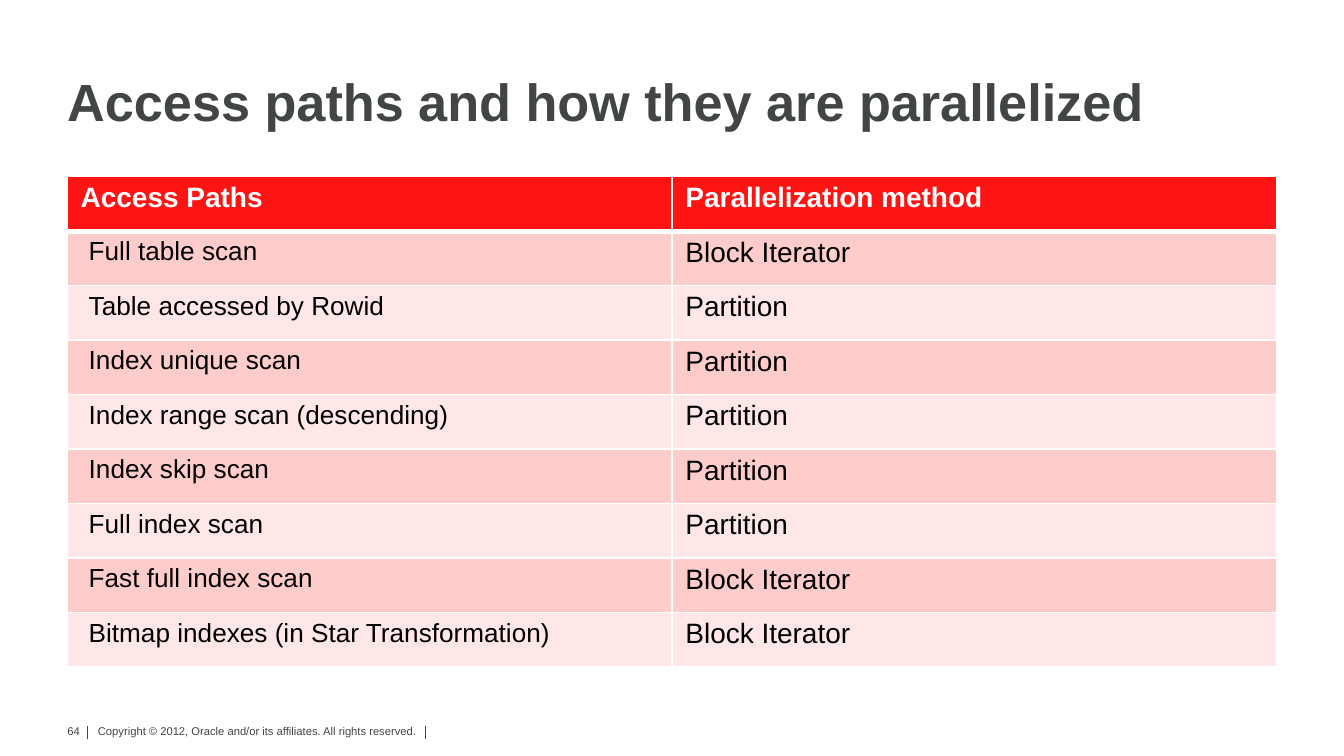
import pptx
import pptx.dml.color
import pptx.enum.shapes
import pptx.enum.text
import pptx.oxml
import pptx.oxml.ns
import pptx.util

Pt = pptx.util.Pt
GREY, WHITE, BLACK = "424545", "FFFFFF", "000000"
HEADER_RED, DARK_BAND, LIGHT_BAND = "FF1414", "FFCCCC", "FFE7E7"
ACCESS_PATHS = [
    ("Access Paths", "Parallelization method"),
    ("Full table scan", "Block Iterator"),
    ("Table accessed by Rowid", "Partition"),
    ("Index unique scan", "Partition"),
    ("Index range scan (descending)", "Partition"),
    ("Index skip scan", "Partition"),
    ("Full index scan", "Partition"),
    ("Fast full index scan", "Block Iterator"),
    ("Bitmap indexes (in Star Transformation)", "Block Iterator"),
]


def rgb(value):
    """Turn a hex string into a colour."""
    return pptx.dml.color.RGBColor.from_string(value)


def add_run(paragraph, text, size, color, bold=False):
    """Add one formatted run to a paragraph."""
    run = paragraph.add_run()
    run.text = text
    run.font.name = "Arial"
    run.font.size = Pt(size)
    run.font.bold = bold
    run.font.color.rgb = rgb(color)


def set_margins(target, horizontal, vertical):
    """Set the inner margins of a text frame or a cell."""
    target.margin_left = target.margin_right = Pt(horizontal)
    target.margin_top = target.margin_bottom = Pt(vertical)


def set_title(slide, text):
    """Place and fill the title placeholder."""
    title = slide.shapes.title
    title.left, title.top, title.width, title.height = Pt(36), Pt(38), Pt(648), Pt(33)
    frame = title.text_frame
    frame.auto_size = pptx.enum.text.MSO_AUTO_SIZE.NONE
    frame.vertical_anchor = pptx.enum.text.MSO_ANCHOR.BOTTOM
    set_margins(frame, 0, 0)
    heading = frame.paragraphs[0]
    heading.alignment = pptx.enum.text.PP_ALIGN.LEFT
    heading.line_spacing = 0.9
    add_run(heading, text, 28, GREY, bold=True)


def add_borders(cell, bottom):
    """Give a cell white borders, with its own bottom width."""
    properties = cell._tc.get_or_add_tcPr()
    for side, width in (("L", 1), ("R", 1), ("T", 1), ("B", bottom)):
        properties.append(pptx.oxml.parse_xml(
            f'<a:ln{side} {pptx.oxml.ns.nsdecls("a")} w="{Pt(width)}">'
            f'<a:solidFill><a:srgbClr val="{WHITE}"/></a:solidFill></a:ln{side}>'))


def fill_cell(cell, text, row, column):
    """Format one table cell by its place in the table."""
    header = row == 0
    set_margins(cell, 7.2, 3.2)
    add_borders(cell, 3 if header else 1)
    cell.fill.solid()
    band = DARK_BAND if row % 2 else LIGHT_BAND
    cell.fill.fore_color.rgb = rgb(HEADER_RED if header else band)
    paragraph = cell.text_frame.paragraphs[0]
    indented = column == 0 and not header
    if indented:
        paragraph._p.get_or_add_pPr().set("marL", str(Pt(4.3)))
    add_run(paragraph, text, 14 if indented else 15, WHITE if header else BLACK, bold=header)


def add_access_table(slide):
    """Add the table of access paths."""
    table = slide.shapes.add_table(
        len(ACCESS_PATHS), 2, Pt(36), Pt(94.6), Pt(648), Pt(262.8)).table
    for row, texts in enumerate(ACCESS_PATHS):
        table.rows[row].height = Pt(29.2)
        for column, text in enumerate(texts):
            fill_cell(table.cell(row, column), text, row, column)


def add_footer_text(slide, text, left, top, width, height, margins):
    """Add a small footer text and return its box."""
    box = slide.shapes.add_textbox(Pt(left), Pt(top), Pt(width), Pt(height))
    set_margins(box.text_frame, *margins)
    box.text_frame.word_wrap = True
    add_run(box.text_frame.paragraphs[0], text, 6, GREY)
    return box


def add_divider(slide, x):
    """Add a thin vertical footer line."""
    divider = slide.shapes.add_connector(
        pptx.enum.shapes.MSO_CONNECTOR.STRAIGHT, Pt(x), Pt(389), Pt(x), Pt(396))
    divider.line.color.rgb = rgb(GREY)
    divider.line.width = Pt(0.5)
    divider._element.spPr.append(
        pptx.oxml.parse_xml(f'<a:effectLst {pptx.oxml.ns.nsdecls("a")}/>'))


def add_footer(slide):
    """Add the copyright line, its dividers and the page number."""
    add_footer_text(
        slide, "Copyright © 2012, Oracle and/or its affiliates. All rights reserved.",
        49.6, 386.6, 197.3, 17, (2.9, 1.4))
    for x in (47, 228):
        add_divider(slide, x)
    number = add_footer_text(slide, "64", 28, 384.5, 21.8, 14.4, (7.2, 3.6)).text_frame
    number.word_wrap = False
    number.auto_size = pptx.enum.text.MSO_AUTO_SIZE.SHAPE_TO_FIT_TEXT
    number.paragraphs[0].alignment = pptx.enum.text.PP_ALIGN.RIGHT


def main():
    """Build and save the slide."""
    deck = pptx.Presentation()
    deck.slide_width, deck.slide_height = Pt(720), Pt(405)
    slide = deck.slides.add_slide(deck.slide_layouts[5])
    add_footer(slide)
    set_title(slide, "Access paths and how they are parallelized")
    add_access_table(slide)
    deck.save("out.pptx")


if __name__ == "__main__":
    main()
